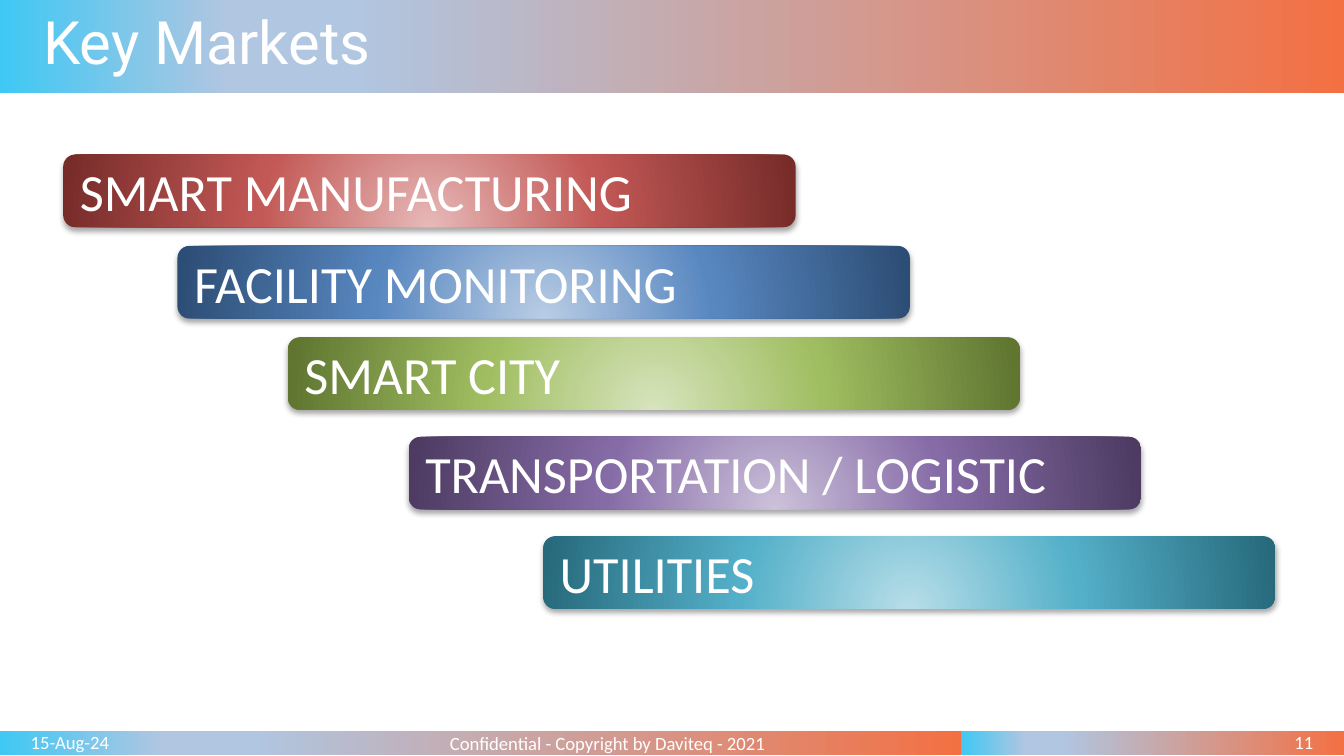
"""Build the Key Markets slide with five staggered market bars."""
from lxml.etree import SubElement
from pptx import Presentation
from pptx.dml.color import RGBColor
from pptx.enum.shapes import MSO_SHAPE
from pptx.enum.text import MSO_ANCHOR, MSO_AUTO_SIZE, PP_ALIGN
from pptx.oxml.ns import qn
from pptx.util import Inches, Pt

WHITE = RGBColor(0xFF, 0xFF, 0xFF)
BLACK = RGBColor(0x00, 0x00, 0x00)
ORANGE = RGBColor(0xF3, 0x70, 0x43)
PALE_BLUE = RGBColor(0xB0, 0xC6, 0xE1)
SKY = RGBColor(0x3F, 0xC8, 0xF4)
RED_TONES = (RGBColor(0xE6, 0xB9, 0xB8), RGBColor(0xC3, 0x59, 0x56), RGBColor(0x77, 0x2C, 0x2A))
BLUE_TONES = (RGBColor(0xB9, 0xCD, 0xE5), RGBColor(0x58, 0x87, 0xC0), RGBColor(0x2C, 0x4D, 0x75))
GREEN_TONES = (RGBColor(0xD7, 0xE4, 0xBD), RGBColor(0xA0, 0xBE, 0x61), RGBColor(0x5F, 0x75, 0x30))
PURPLE_TONES = (RGBColor(0xCC, 0xC1, 0xDA), RGBColor(0x86, 0x6C, 0xA7), RGBColor(0x4D, 0x3B, 0x62))
TEAL_TONES = (RGBColor(0xB7, 0xDE, 0xE8), RGBColor(0x54, 0xB0, 0xC9), RGBColor(0x27, 0x6A, 0x7C))

BAND_STOPS = ((0, ORANGE), (74, PALE_BLUE), (83, PALE_BLUE), (100, SKY))
MARKETS = (
    ("SMART MANUFACTURING", 0.47, 1.15, RED_TONES),
    ("FACILITY MONITORING", 1.32, 1.83, BLUE_TONES),
    ("SMART CITY", 2.14, 2.51, GREEN_TONES),
    ("TRANSPORTATION / LOGISTIC", 3.04, 3.25, PURPLE_TONES),
    ("UTILITIES", 4.04, 3.99, TEAL_TONES),
)


def write_text(shape, text, size=10, font="Calibri", color=WHITE,
               align=PP_ALIGN.LEFT, anchor=MSO_ANCHOR.TOP, wrap=True):
    """Write one formatted line into a shape and return its paragraph."""
    frame = shape.text_frame
    frame.auto_size = MSO_AUTO_SIZE.NONE
    frame.word_wrap = wrap
    frame.vertical_anchor = anchor
    para = frame.paragraphs[0]
    para.alignment = align
    span = para.add_run()
    span.text = text
    span.font.size = Pt(size)
    span.font.name = font
    span.font.color.rgb = color
    return para


def fill_gradient(shape, stops, radial=False):
    """Fill a shape with a right-to-left or a radial gradient."""
    shape.fill.gradient()
    gradient = shape._element.spPr.find(qn("a:gradFill"))
    for child in list(gradient):
        gradient.remove(child)
    stop_list = SubElement(gradient, qn("a:gsLst"))
    for position, color in stops:
        stop = SubElement(stop_list, qn("a:gs"), pos=str(position * 1000))
        SubElement(stop, qn("a:srgbClr"), val=str(color))
    if radial:
        circle = SubElement(gradient, qn("a:path"), path="circle")
        SubElement(circle, qn("a:fillToRect"), l="50000", t="130000", r="50000", b="-30000")
    else:
        SubElement(gradient, qn("a:lin"), ang="10800000", scaled="0")


def add_shadow(shape):
    """Give a shape a soft shadow just below it."""
    effects = shape._element.spPr.find(qn("a:effectLst"))
    shadow = SubElement(effects, qn("a:outerShdw"), blurRad=str(Pt(3.1)), dist=str(Pt(1.8)),
                        dir="5400000", rotWithShape="0")
    color = SubElement(shadow, qn("a:srgbClr"), val=str(BLACK))
    SubElement(color, qn("a:alpha"), val="35000")


class MarketSlide:
    """Hold the slide and draw its elements in the shared style."""

    def __init__(self, deck):
        self.page = deck.slides.add_slide(deck.slide_layouts[5])

    def title(self, text):
        """Place the title on a full-width gradient band."""
        title = self.page.shapes.title
        title.left, title.top = Inches(0), Inches(-0.09)
        title.width, title.height = Inches(10), Inches(0.78)
        fill_gradient(title, BAND_STOPS)
        para = write_text(title, text, size=32, font="Roboto", anchor=MSO_ANCHOR.MIDDLE)
        properties = para._p.get_or_add_pPr()
        properties.set("marL", str(Inches(0.22)))
        properties.set("indent", "0")

    def shape(self, kind, left, top, width, height):
        """Add a preset shape without line or inherited shadow."""
        shape = self.page.shapes.add_shape(
            kind, Inches(left), Inches(top), Inches(width), Inches(height))
        shape.line.fill.background()
        shape.shadow.inherit = False
        return shape

    def footer_band(self, left, width):
        """Add one gradient part of the footer."""
        fill_gradient(self.shape(MSO_SHAPE.RECTANGLE, left, 5.44, width, 0.18), BAND_STOPS)

    def label(self, text, left, top, width, height, **style):
        """Add a line of footer text."""
        box = self.page.shapes.add_textbox(
            Inches(left), Inches(top), Inches(width), Inches(height))
        write_text(box, text, **style)

    def market_bar(self, text, left, top, tones):
        """Add a rounded, glossy bar that names a market."""
        bar = self.shape(MSO_SHAPE.ROUNDED_RECTANGLE, left, top, 5.45, 0.54)
        fill_gradient(bar, zip((0, 46, 100), tones), radial=True)
        add_shadow(bar)
        write_text(bar, text, size=28, anchor=MSO_ANCHOR.MIDDLE)


def main():
    """Build and save the deck."""
    deck = Presentation()
    deck.slide_width = Inches(10)
    deck.slide_height = deck.slide_width * 9 // 16
    slide = MarketSlide(deck)
    slide.footer_band(0, 7.15)
    slide.footer_band(7.15, 2.85)
    slide.label("15-Aug-24", 0.13, 5.39, 1.24, 0.27)
    slide.label("11", 8.63, 5.39, 1.24, 0.27, align=PP_ALIGN.RIGHT)
    slide.title("Key Markets")
    for market in MARKETS:
        slide.market_bar(*market)
    slide.label("Confidential - Copyright by Daviteq - 2021", 3.25, 5.4, 3.17, 0.3)
    deck.save("out.pptx")


if __name__ == "__main__":
    main()
